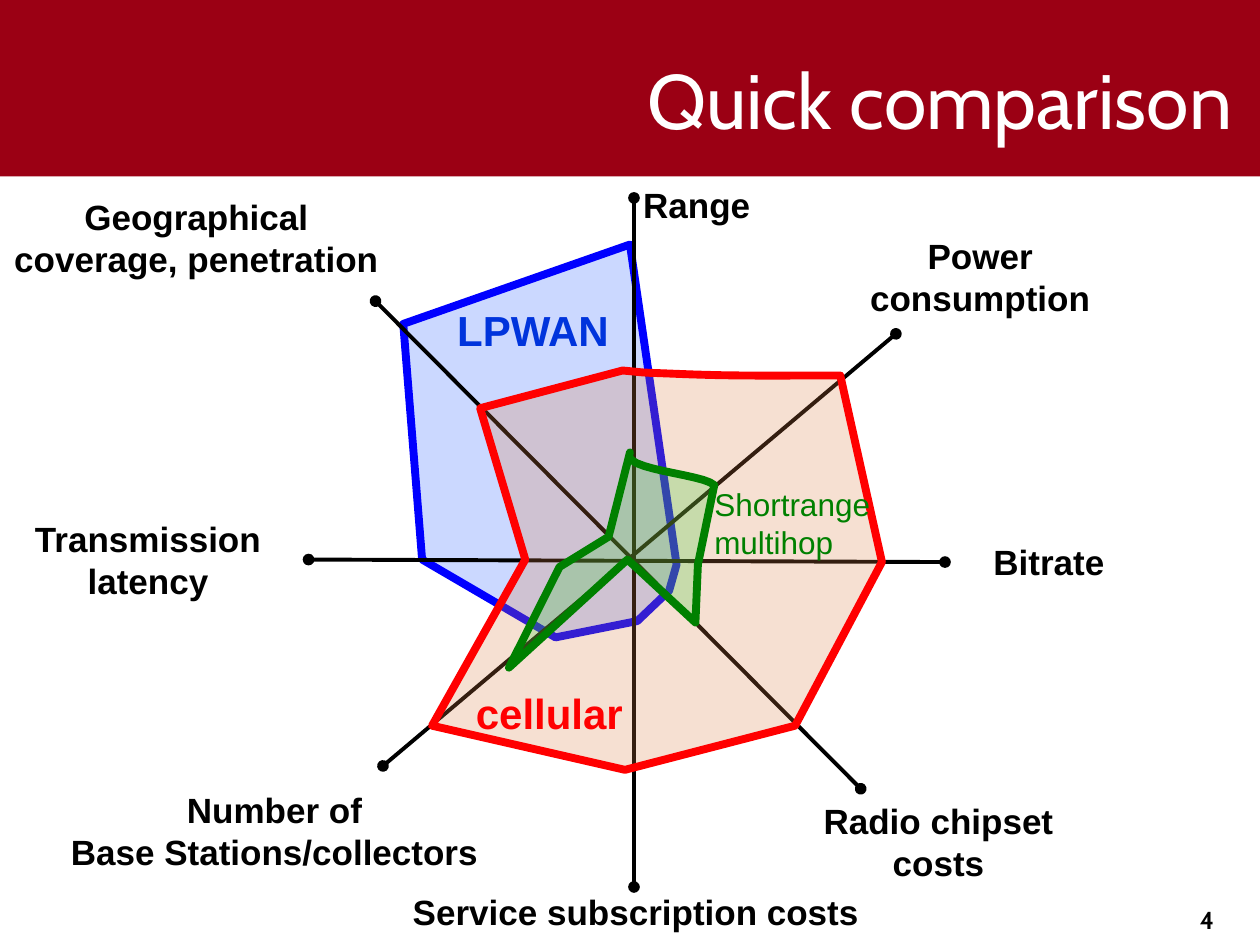
from lxml import etree
from pptx import Presentation
from pptx import util as u
from pptx.dml.color import RGBColor
from pptx.enum import shapes, text
from pptx.oxml import ns

COLORS = {
    "banner": "9B0014", "white": "FFFFFF", "black": "000000",
    "lpwan_fill": "3366FF", "lpwan_line": "0000FF", "lpwan_text": "0034DC",
    "cellular_fill": "DD8047", "cellular_line": "FF0000",
    "multihop_fill": "33CC33", "multihop_line": "008000",
}

# Axes: start x, start y, end x, end y (cm)
AXES = [
    (12.78, 3.99, 12.78, 17.88),
    (6.22, 11.28, 19.05, 11.33),
    (7.57, 6.07, 17.35, 15.9),
    (7.72, 15.44, 18.06, 6.73),
]

# Axis labels: text, then left, top, width, height (cm)
AXIS_LABELS = [
    ("Range", 12.7, 3.58, 2.69, 1.12),
    ("Power\nconsumption", 17.27, 4.6, 4.98, 1.96),
    ("Bitrate", 19.76, 10.77, 2.77, 1.12),
    ("Radio chipset\ncosts", 16.33, 16, 5.18, 1.96),
    ("Service subscription costs", 8.03, 17.83, 9.58, 1.12),
    ("Number of\nBase Stations/collectors", 1.14, 15.77, 8.79, 1.96),
    ("Transmission\nlatency", 0.43, 10.31, 5.11, 1.96),
    ("Geographical\ncoverage, penetration", 0, 3.81, 7.92, 1.96),
]


def rgb(name):
    return RGBColor.from_string(COLORS[name])


def curve(start, control1, control2, end, steps=12):
    """Points of a cubic curve, both ends included."""
    points = []
    for step in range(steps + 1):
        t = step / steps
        weights = ((1 - t) ** 3, 3 * t * (1 - t) ** 2, 3 * t * t * (1 - t), t ** 3)
        points.append(tuple(
            sum(weight * value for weight, value in zip(weights, values))
            for values in zip(start, control1, control2, end)))
    return points


# Outlines of the three technologies (cm)
LPWAN = [(12.7, 4.93), (8.13, 6.53), (8.51, 11.28), (11.2, 12.85),
         (12.85, 12.52), (13.49, 11.91), (13.64, 11.38)]
CELLULAR = [
    *curve((12.55, 7.47), (12.78, 7.49), (13, 7.52), (13.21, 7.52)),
    *curve((13.21, 7.52), (14.83, 7.59), (15.19, 7.57), (16.94, 7.57))[1:],
    (17.78, 11.33), (16.03, 14.63), (12.6, 15.52), (8.71, 14.63),
    (10.59, 11.28), (9.68, 8.23)]
MULTIHOP = [
    *curve((12.7, 9.12), (12.47, 9.47), (14.17, 9.55), (14.4, 9.78)),
    (14.07, 11.38), (14.02, 12.55), (12.65, 11.28), (10.26, 13.46),
    (11.28, 11.43), (12.27, 10.82)]


def add_text(page, content, left, top, width, height, *, size=20, font="Arial",
             color="black", bold=False, align=text.PP_ALIGN.CENTER,
             anchor=text.MSO_ANCHOR.TOP, wrap=False):
    box = page.shapes.add_textbox(u.Cm(left), u.Cm(top), u.Cm(width), u.Cm(height))
    frame = box.text_frame
    frame.word_wrap = wrap
    frame.auto_size = (text.MSO_AUTO_SIZE.NONE if wrap
                       else text.MSO_AUTO_SIZE.SHAPE_TO_FIT_TEXT)
    frame.vertical_anchor = anchor
    frame.text = content
    for para in frame.paragraphs:
        para.alignment = align
        for span in para.runs:
            span.font.size = u.Pt(size)
            span.font.name = font
            span.font.bold = bold
            span.font.color.rgb = rgb(color)


def add_banner(page):
    banner = page.shapes.add_shape(
        shapes.MSO_SHAPE.RECTANGLE, 0, 0, u.Cm(25.4), u.Cm(3.56))
    banner.shadow.inherit = False
    banner.fill.solid()
    banner.fill.fore_color.rgb = rgb("banner")
    banner.line.fill.background()


def add_area(page, points, fill, line, opacity):
    corners = [(u.Cm(x), u.Cm(y)) for x, y in points]
    builder = page.shapes.build_freeform(*corners[0])
    builder.add_line_segments(corners[1:], close=True)
    area = builder.convert_to_shape()
    area.shadow.inherit = False
    area.fill.solid()
    area.fill.fore_color.rgb = rgb(fill)
    color = area.fill._xPr.find(".//" + ns.qn("a:srgbClr"))
    etree.SubElement(color, ns.qn("a:alpha"), val=str(opacity * 1000))
    area.line.color.rgb = rgb(line)
    area.line.width = u.Pt(4.5)


def add_axis(group, ends):
    axis = group.shapes.add_connector(
        shapes.MSO_CONNECTOR.STRAIGHT, *(u.Cm(value) for value in ends))
    axis.line.color.rgb = rgb("black")
    axis.line.width = u.Pt(2.25)
    for end in ("a:headEnd", "a:tailEnd"):
        etree.SubElement(axis.line._get_or_add_ln(), ns.qn(end), type="oval")
    etree.SubElement(axis._element.spPr, ns.qn("a:effectLst"))


def main():
    deck = Presentation()
    deck.slide_width, deck.slide_height = u.Cm(25.4), u.Cm(19.05)
    page = deck.slides.add_slide(deck.slide_layouts[6])

    # Banner, rearmost area, title and page number
    add_banner(page)
    add_area(page, LPWAN, "lpwan_fill", "lpwan_line", 25)
    add_text(page, "Quick comparison", 5, 0.64, 20.1, 2.72, size=44, font="Cabin",
             color="white", align=text.PP_ALIGN.RIGHT,
             anchor=text.MSO_ANCHOR.MIDDLE, wrap=True)
    add_text(page, "4", 23.27, 18.03, 2.13, 1.02, size=14, font="Cabin",
             bold=True, anchor=text.MSO_ANCHOR.MIDDLE, wrap=True)

    # Axes and their labels
    group = page.shapes.add_group_shape()
    for ends in AXES:
        add_axis(group, ends)
    for label in AXIS_LABELS:
        add_text(page, *label, bold=True)

    # Front areas and the names of the technologies
    add_area(page, CELLULAR, "cellular_fill", "cellular_line", 24)
    add_area(page, MULTIHOP, "multihop_fill", "multihop_line", 24)
    add_text(page, "LPWAN", 8.94, 6.02, 3.61, 1.27, size=24,
             color="lpwan_text", bold=True)
    add_text(page, "cellular", 9.32, 13.74, 3.51, 1.27, size=24,
             color="cellular_line", bold=True)
    add_text(page, "Shortrange\nmultihop", 14.15, 9.65, 3.68, 1.8, size=18,
             color="multihop_line", align=text.PP_ALIGN.LEFT)

    deck.save("out.pptx")


if __name__ == "__main__":
    main()
